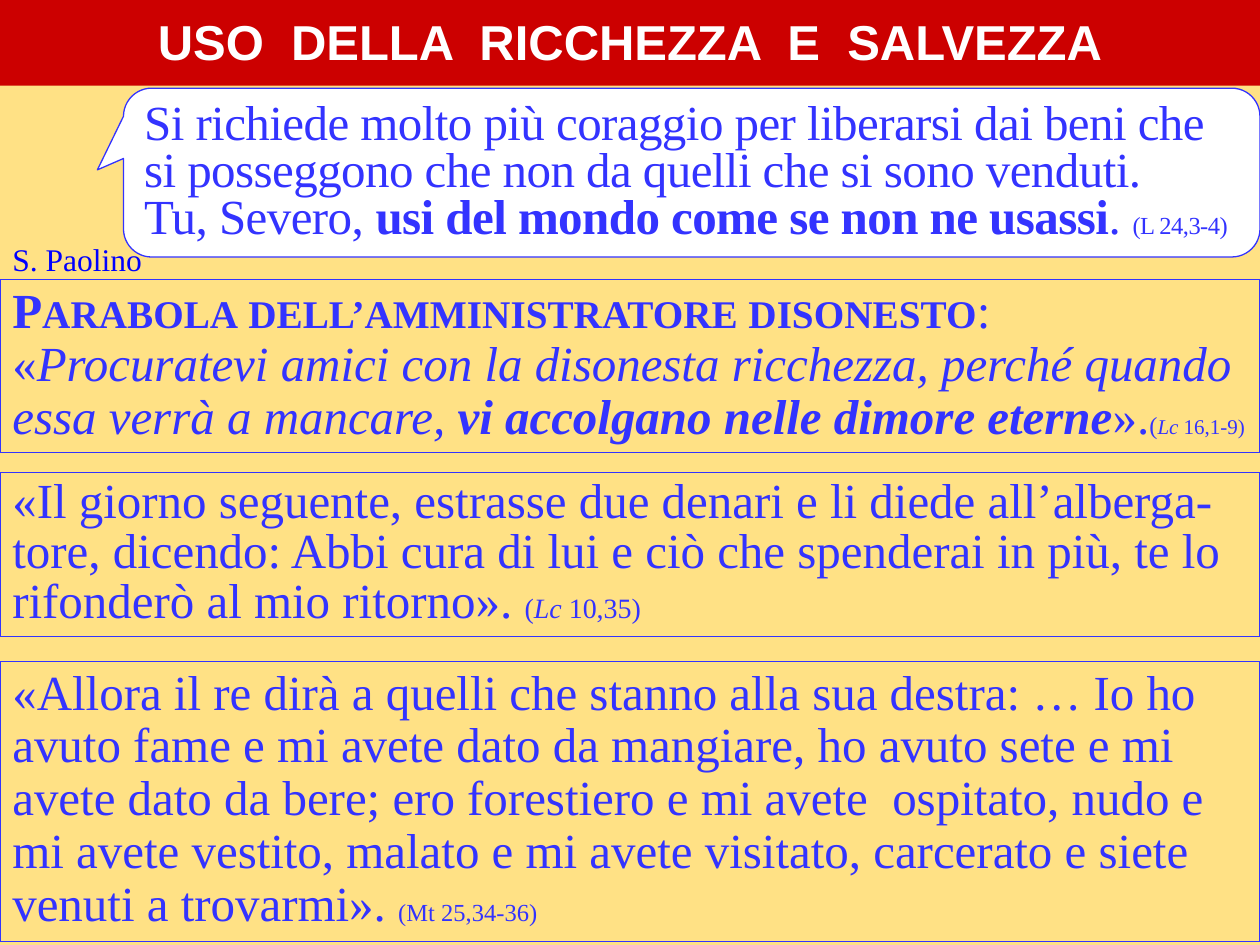
from dataclasses import dataclass

from pptx import Presentation
from pptx.dml.color import RGBColor
from pptx.enum import shapes, text
from pptx.util import Inches, Pt

COLORS = {
    "background": "FFE185",
    "banner": "CC0000",
    "white": "FFFFFF",
    "quote": "3333FF",
    "speaker": "0000FF",
}
SERIF = "Times New Roman"


@dataclass
class Span:
    words: str
    size: float = 28
    bold: bool = False
    italic: bool = False
    small_caps: bool = False
    spacing: int = 0  # hundredths of a point
    font: str = SERIF
    color: str = "quote"


@dataclass
class Passage:
    top: float
    height: float
    line_spacing: float
    spans: list[Span]


def rgb(name: str) -> RGBColor:
    return RGBColor.from_string(COLORS[name])


def write(paragraph, spans: list[Span], line_spacing=None) -> None:
    paragraph.alignment = text.PP_ALIGN.LEFT
    if line_spacing:
        paragraph.line_spacing = line_spacing
    for span in spans:
        run = paragraph.add_run()
        run.text = span.words
        font = run.font
        font.name, font.size = span.font, Pt(span.size)
        font.bold, font.italic = span.bold, span.italic
        font.color.rgb = rgb(span.color)
        if span.small_caps:
            font._element.set("cap", "small")
        if span.spacing:
            font._element.set("spc", str(span.spacing))


def add_box(slide, kind, left: float, top: float, width: float, height: float,
            fill: str | None = None, line: str | None = None):
    box = slide.shapes.add_shape(
        kind, Inches(left), Inches(top), Inches(width), Inches(height))
    box.shadow.inherit = False
    if fill:
        box.fill.solid()
        box.fill.fore_color.rgb = rgb(fill)
    else:
        box.fill.background()
    if line:
        box.line.color.rgb = rgb(line)
        box.line.width = Pt(0.75)
    else:
        box.line.fill.background()
    box.text_frame.word_wrap = True
    box.text_frame.vertical_anchor = text.MSO_ANCHOR.TOP
    return box


def add_passage(slide, passage: Passage) -> None:
    box = add_box(slide, shapes.MSO_SHAPE.RECTANGLE, 0, passage.top, 10,
                  passage.height, line="quote")
    box.text_frame.auto_size = text.MSO_AUTO_SIZE.SHAPE_TO_FIT_TEXT
    write(box.text_frame.paragraphs[0], passage.spans, passage.line_spacing)


PASSAGES = [
    Passage(2.22, 1.37, 0.9, [
        Span("Parabola dell’amministratore disonesto", bold=True, small_caps=True),
        Span(": «"),
        Span("Procuratevi amici con la disonesta ricchezza, perché quando "
             "essa verrà a mancare, ", italic=True),
        Span("vi accolgano nelle dimore eterne", bold=True, italic=True),
        Span("»."),
        Span("(", 14),
        Span("Lc", 12, italic=True),
        Span(" 16,1-9)", 12),
    ]),
    Passage(3.75, 1.3, 0.85, [
        Span("«Il giorno seguente, estrasse due denari e li diede all’alberga-tore, "
             "dicendo: Abbi cura di lui e ciò che spenderai in più, te lo "
             "rifonderò al mio ritorno». "),
        Span("(", 16),
        Span("Lc", 16, italic=True),
        Span(" 10,35)", 16),
    ]),
    Passage(5.25, 2.22, 0.9, [
        Span("«Allora il re dirà a quelli che stanno alla sua destra: … Io ho "
             "avuto fame e mi avete dato da mangiare, ho avuto sete e mi avete "
             "dato da bere; ero forestiero e mi avete  ospitato, nudo e mi avete "
             "vestito, malato e mi avete visitato, carcerato e siete venuti a "
             "trovarmi». "),
        Span("(Mt 25,34-36)", 14),
    ]),
]

TIGHT = -30
SPEECH = [
    [Span("Si richiede molto più coraggio per liberarsi dai beni che", spacing=TIGHT)],
    [Span("si posseggono che non da quelli che si sono venduti.", spacing=TIGHT)],
    [Span("Tu, Severo, ", spacing=TIGHT),
     Span("usi del mondo come se non ne usassi", bold=True, spacing=TIGHT),
     Span(". ", spacing=TIGHT),
     Span("(L 24,3-4)", 14, spacing=TIGHT)],
]


def main() -> None:
    prs = Presentation()
    prs.slide_width, prs.slide_height = Inches(10), Inches(7.5)
    slide = prs.slides.add_slide(prs.slide_layouts[6])
    slide.background.fill.solid()
    slide.background.fill.fore_color.rgb = rgb("background")

    # Title banner
    banner = add_box(slide, shapes.MSO_SHAPE.RECTANGLE, 0, -0.03, 10, 0.71,
                     fill="banner")
    banner.text_frame.vertical_anchor = text.MSO_ANCHOR.MIDDLE
    title = banner.text_frame.paragraphs[0]
    write(title, [Span("USO  DELLA  RICCHEZZA  E  SALVEZZA", bold=True,
                       font="Arial", color="white")])
    title.alignment = text.PP_ALIGN.CENTER

    # Gospel passages
    for passage in PASSAGES:
        add_passage(slide, passage)

    # Speech balloon
    balloon = add_box(slide, shapes.MSO_SHAPE.ROUNDED_RECTANGULAR_CALLOUT,
                      0.98, 0.7, 9.02, 1.34, fill="white", line="quote")
    for index, value in enumerate((-0.523, -0.016, 0.167)):
        balloon.adjustments[index] = value
    frame = balloon.text_frame
    for index, spans in enumerate(SPEECH):
        line = frame.add_paragraph() if index else frame.paragraphs[0]
        write(line, spans, Pt(27))

    # Speaker
    speaker = slide.shapes.add_textbox(
        Inches(0), Inches(1.86), Inches(1.56), Inches(0.4))
    speaker.text_frame.word_wrap = True
    speaker.text_frame.auto_size = text.MSO_AUTO_SIZE.SHAPE_TO_FIT_TEXT
    write(speaker.text_frame.paragraphs[0],
          [Span("S. Paolino", 18, color="speaker")])

    prs.save("out.pptx")


if __name__ == "__main__":
    main()
